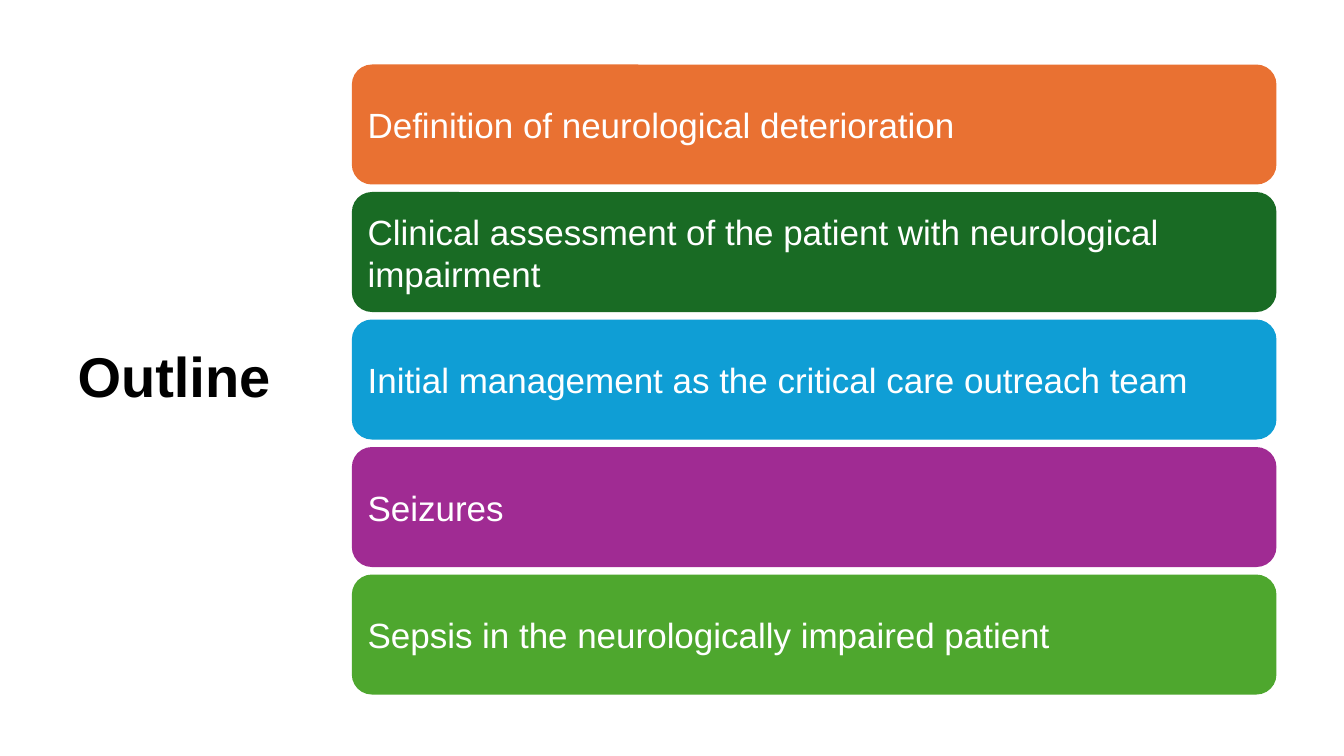
from dataclasses import dataclass

from pptx import Presentation
from pptx.dml.color import RGBColor
from pptx.enum.shapes import MSO_SHAPE
from pptx.enum.text import MSO_ANCHOR, PP_ALIGN
from pptx.slide import Slide
from pptx.text.text import TextFrame
from pptx.util import Inches, Pt

ROUNDED = MSO_SHAPE.ROUNDED_RECTANGLE
MIDDLE = MSO_ANCHOR.MIDDLE
LEFT = PP_ALIGN.LEFT
TITLE_ONLY = 5


@dataclass(frozen=True)
class Theme:
    font: str = "Arial"
    title_size: int = 40
    topic_size: int = 25
    title_color: str = "000000"
    topic_color: str = "FFFFFF"


@dataclass(frozen=True)
class Topic:
    text: str
    fill: str


THEME = Theme()
TOPICS = [
    Topic("Definition of neurological deterioration", "E97132"),
    Topic("Clinical assessment of the patient with neurological impairment", "196B24"),
    Topic("Initial management as the critical care outreach team", "0F9ED5"),
    Topic("Seizures", "A02B93"),
    Topic("Sepsis in the neurologically impaired patient", "4EA72E"),
]
TOPIC_LEFT, TOPIC_WIDTH, TOPIC_HEIGHT = 3.49, 9.17, 1.19
FIRST_TOP, LAST_TOP = 0.64, 5.7
TOPIC_PITCH = (LAST_TOP - FIRST_TOP) / (len(TOPICS) - 1)


def write_text(frame: TextFrame, text: str, size: int, color: str, bold: bool = False) -> None:
    frame.text = text
    frame.word_wrap = True
    frame.vertical_anchor = MIDDLE
    para = frame.paragraphs[0]
    para.alignment = LEFT
    font = para.runs[0].font
    font.name = THEME.font
    font.size = Pt(size)
    font.bold = bold
    font.color.rgb = RGBColor.from_string(color)


def add_title(slide: Slide, text: str) -> None:
    title = slide.shapes.title
    title.left, title.top = Inches(0.67), Inches(0.6)
    title.width, title.height = Inches(3.82), Inches(6.33)
    write_text(title.text_frame, text, THEME.title_size, THEME.title_color, bold=True)
    title.text_frame.paragraphs[0].line_spacing = 0.9


def add_topic(slide: Slide, topic: Topic, top: float) -> None:
    box = slide.shapes.add_shape(
        ROUNDED, Inches(TOPIC_LEFT), Inches(top), Inches(TOPIC_WIDTH), Inches(TOPIC_HEIGHT)
    )
    box.shadow.inherit = False
    box.fill.solid()
    box.fill.fore_color.rgb = RGBColor.from_string(topic.fill)
    box.line.fill.background()
    frame = box.text_frame
    frame.margin_left = frame.margin_right = Inches(0.1)
    frame.margin_top = frame.margin_bottom = Inches(0.1)
    write_text(frame, topic.text, THEME.topic_size, THEME.topic_color)


def main() -> None:
    deck = Presentation()
    deck.slide_width, deck.slide_height = Inches(13.33), Inches(7.5)
    slide = deck.slides.add_slide(deck.slide_layouts[TITLE_ONLY])
    add_title(slide, "Outline")
    for index, topic in enumerate(TOPICS):
        add_topic(slide, topic, FIRST_TOP + index * TOPIC_PITCH)
    deck.save("out.pptx")


if __name__ == "__main__":
    main()
